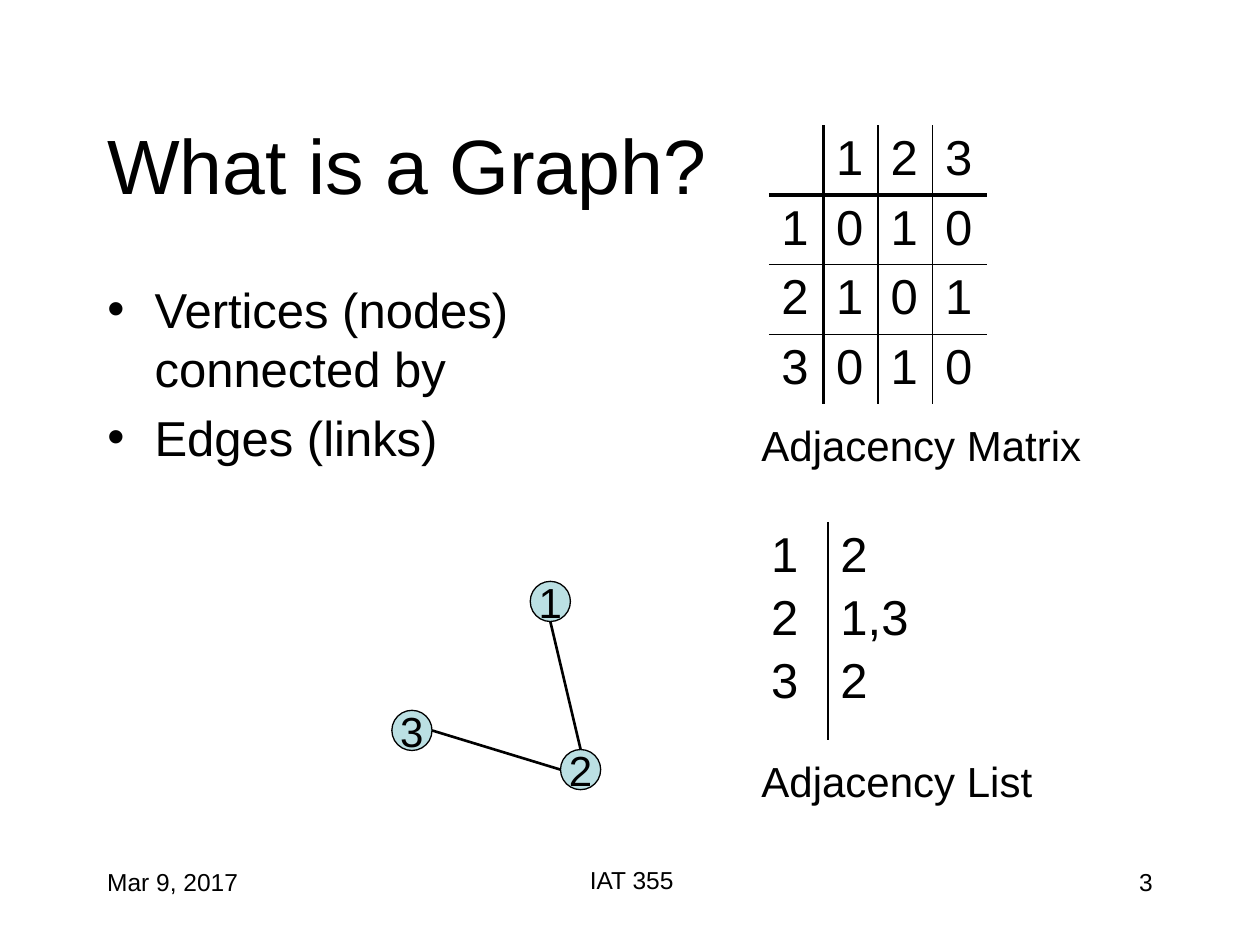
from lxml import etree
from pptx import Presentation
from pptx.dml.color import RGBColor
from pptx.enum import shapes, text
from pptx.oxml import ns
from pptx.util import Cm, Pt

BLACK = RGBColor(0x00, 0x00, 0x00)
NODE_BLUE = RGBColor(0xBB, 0xE0, 0xE3)
NODE_SIZE = 0.81
THIN, THICK = 1, 2.25

NODES = {"1": (10.69, 11.72), "2": (11.3, 15.11), "3": (7.9, 14.32)}
MATRIX = [["", "1", "2", "3"], ["1", "0", "1", "0"], ["2", "1", "0", "1"], ["3", "0", "1", "0"]]
ADJACENCY = [["1\n2\n3", "2\n1,3\n2"]]


def style(frame, size, align=text.PP_ALIGN.LEFT):
    """Give every paragraph of a frame the slide's font."""
    for paragraph in frame.paragraphs:
        paragraph.alignment = align
        paragraph.font.name = "Arial"
        paragraph.font.size = Pt(size)
        paragraph.font.color.rgb = BLACK


def fill_placeholder(holder, wording, box, size):
    """Move a placeholder and write its text."""
    holder.left, holder.top, holder.width, holder.height = map(Cm, box)
    holder.text_frame.text = wording
    holder.text_frame.auto_size = text.MSO_AUTO_SIZE.NONE
    style(holder.text_frame, size)


def add_label(slide, wording, box, size, align=text.PP_ALIGN.LEFT):
    """Add a text box with one line."""
    frame = slide.shapes.add_textbox(*map(Cm, box)).text_frame
    frame.word_wrap = True
    frame.text = wording
    style(frame, size, align)


def add_node(slide, name):
    """Add a numbered vertex of the graph."""
    left, top = NODES[name]
    node = slide.shapes.add_shape(
        shapes.MSO_SHAPE.OVAL, Cm(left), Cm(top), Cm(NODE_SIZE), Cm(NODE_SIZE))
    node.shadow.inherit = False
    node.fill.solid()
    node.fill.fore_color.rgb = NODE_BLUE
    node.line.color.rgb = BLACK
    node.line.width = Pt(0.75)
    frame = node.text_frame
    frame.word_wrap = False
    frame.vertical_anchor = text.MSO_ANCHOR.MIDDLE
    frame.text = name
    style(frame, 24, text.PP_ALIGN.CENTER)


def node_point(name, across, down):
    """Return a point on a node, given as fractions of its size."""
    left, top = NODES[name]
    return Cm(left + across * NODE_SIZE), Cm(top + down * NODE_SIZE)


def add_edge(slide, start, end):
    """Add a link between two points."""
    edge = slide.shapes.add_connector(shapes.MSO_CONNECTOR.STRAIGHT, *start, *end)
    edge.line.color.rgb = BLACK
    edge.line.width = Pt(1.5)
    etree.SubElement(edge._element.spPr, ns.qn("a:effectLst"))


def rule_width(position, count, first):
    """Return the width of a grid rule, or None on the outside."""
    if position in (0, count):
        return None
    return first if position == 1 else THIN


def set_borders(cell, widths):
    """Draw the left, right, top and bottom borders of a cell."""
    properties = cell._tc.get_or_add_tcPr()
    for index, (side, width) in enumerate(zip("LRTB", widths)):
        border = etree.Element(ns.qn(f"a:ln{side}"))
        if width is None:
            etree.SubElement(border, ns.qn("a:noFill"))
        else:
            border.set("w", str(Pt(width)))
            solid = etree.SubElement(border, ns.qn("a:solidFill"))
            etree.SubElement(solid, ns.qn("a:srgbClr"), val=str(BLACK))
        properties.insert(index, border)


def add_grid(slide, values, left, top, widths, row_height, first_rule):
    """Add an open table that has rules only between its cells."""
    rows, columns = len(values), len(widths)
    table = slide.shapes.add_table(
        rows, columns, Cm(left), Cm(top), Cm(sum(widths)), Cm(row_height * rows)).table
    table.first_row = table.horz_banding = False
    for column, width in zip(table.columns, widths):
        column.width = Cm(width)
    for r, row in enumerate(values):
        for c, value in enumerate(row):
            cell = table.cell(r, c)
            cell.margin_top, cell.margin_bottom = Cm(0.12), Cm(0.1)
            cell.text = value
            style(cell.text_frame, 28)
            for paragraph in cell.text_frame.paragraphs[1:]:
                paragraph.space_before = Pt(5)
            cell.fill.background()
            set_borders(cell, [
                rule_width(c, columns, first_rule), rule_width(c + 1, columns, first_rule),
                rule_width(r, rows, first_rule), rule_width(r + 1, rows, first_rule)])


def main():
    """Build the slide about graphs."""
    deck = Presentation()
    deck.slide_width, deck.slide_height = Cm(25.4), Cm(19.05)
    slide = deck.slides.add_slide(deck.slide_layouts[1])
    title, body = slide.placeholders

    add_label(slide, "Mar 9, 2017", (1.91, 17.35, 5.28, 1.27), 14)
    add_label(slide, "IAT 355", (8.71, 17.32, 8.05, 1.27), 14, text.PP_ALIGN.CENTER)
    add_label(slide, "3", (18.21, 17.35, 5.28, 1.27), 14, text.PP_ALIGN.RIGHT)
    fill_placeholder(title, "What is a Graph?", (1.91, 1.7, 21.59, 3.18), 44)
    fill_placeholder(body, "Vertices (nodes) connected by\nEdges (links)",
                     (1.91, 5.51, 10.59, 11.43), 28)

    add_grid(slide, MATRIX, 15.5, 2.52, [1.1] * 4, 1.36, THICK)
    add_label(slide, "Adjacency Matrix", (15.1, 8.33, 6.96, 1.27), 24)

    for name in NODES:
        add_node(slide, name)
    add_edge(slide, node_point("1", 0.5, 1), node_point("2", 0.5, 0))
    add_edge(slide, node_point("2", 0, 0.5), node_point("3", 1, 0.5))

    add_grid(slide, ADJACENCY, 15.29, 10.52, [1.4, 2.41], 4.39, THIN)
    add_label(slide, "Adjacency List", (15.1, 15.11, 5.97, 1.27), 24)
    deck.save("out.pptx")


if __name__ == "__main__":
    main()
